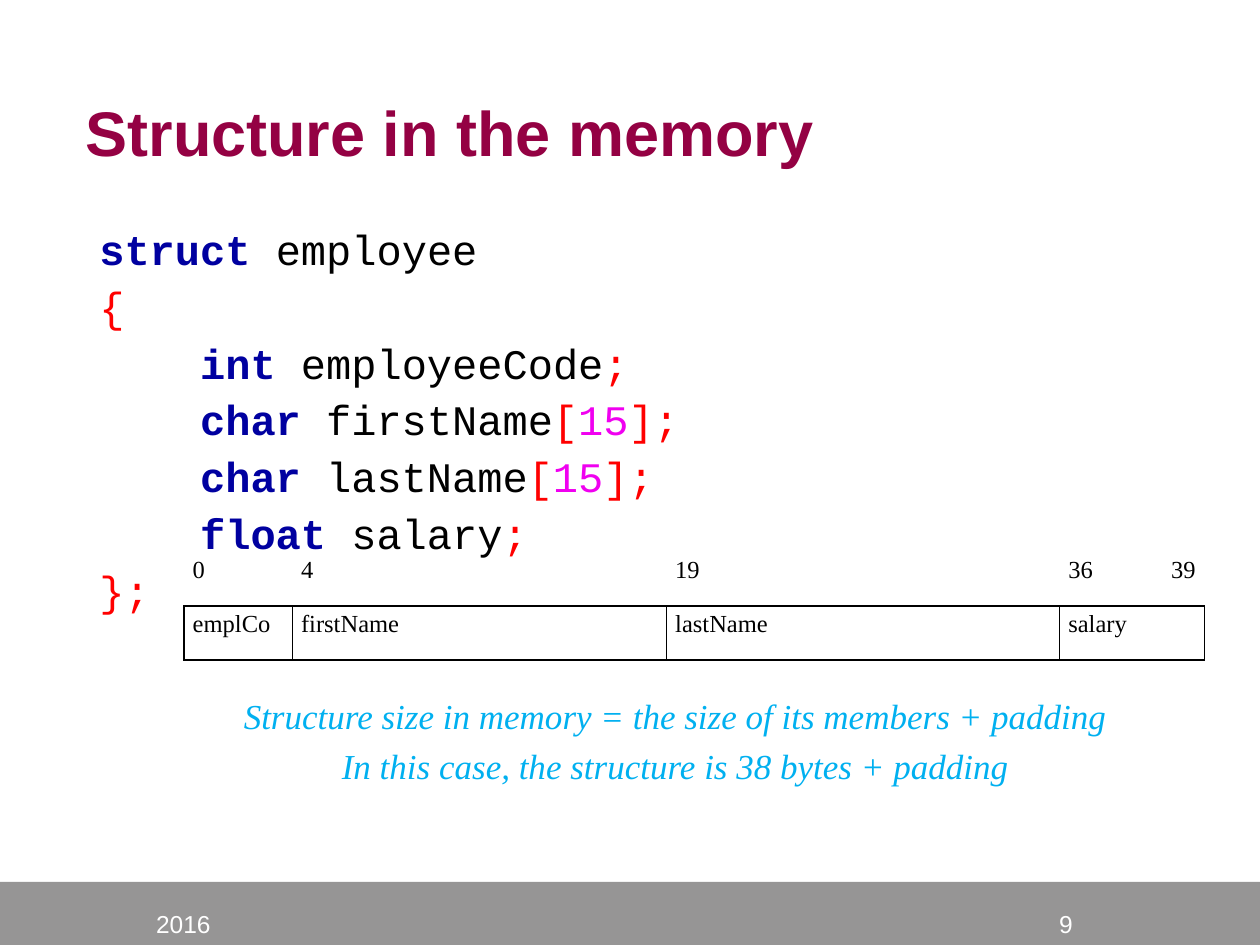
from dataclasses import dataclass
from typing import Optional

from lxml import etree
from pptx import Presentation
from pptx.dml.color import RGBColor
from pptx.enum.shapes import MSO_SHAPE
from pptx.enum.text import MSO_ANCHOR, PP_ALIGN
from pptx.oxml.ns import qn
from pptx.util import Emu, Inches, Pt

LEFT, CENTER, RIGHT = PP_ALIGN.LEFT, PP_ALIGN.CENTER, PP_ALIGN.RIGHT
TOP, MIDDLE, BOTTOM = MSO_ANCHOR.TOP, MSO_ANCHOR.MIDDLE, MSO_ANCHOR.BOTTOM
RECTANGLE = MSO_SHAPE.RECTANGLE
TITLE_ONLY = 5
SLIDE_W, SLIDE_H = Inches(10), Inches(7.5)


@dataclass(frozen=True)
class Theme:
    sans: str = "Arial"
    serif: str = "Times New Roman"
    mono: str = "Courier New"
    title: str = "940143"
    keyword: str = "0000A0"
    symbol: str = "FF0000"
    number: str = "F000F0"
    ink: str = "000000"
    note: str = "00B0F0"
    bar: str = "969595"
    white: str = "FFFFFF"
    title_pt: int = 36
    code_pt: int = 24
    note_pt: int = 20
    small_pt: int = 14


@dataclass(frozen=True)
class Box:
    """Place and size in percent of the slide."""
    x: float
    y: float
    w: float
    h: float

    def emu(self) -> tuple:
        return (Emu(int(SLIDE_W * self.x / 100)), Emu(int(SLIDE_H * self.y / 100)),
                Emu(int(SLIDE_W * self.w / 100)), Emu(int(SLIDE_H * self.h / 100)))


@dataclass(frozen=True)
class Member:
    """A struct member and the table columns its field covers."""
    kind: str
    name: str
    label: str
    offset: int
    width: float
    count: Optional[int] = None


T = Theme()
MEMBERS = [
    Member("int", "employeeCode", "emplCo", 0, 8.6),
    Member("char", "firstName", "firstName", 4, 29.7, 15),
    Member("char", "lastName", "lastName", 19, 31.2, 15),
    Member("float", "salary", "salary", 36, 6.1),
]
LAST_BYTE, LAST_WIDTH = 39, 5.4
NOTES = ["Structure size in memory = the size of its members + padding",
         "In this case, the structure is 38 bytes + padding"]


def add_run(p, text: str, *, font: str, size: int, color: str,
            bold: bool = False, italic: bool = False) -> None:
    r = p.add_run()
    r.text = text
    r.font.name, r.font.size = font, Pt(size)
    r.font.bold, r.font.italic = bold, italic
    r.font.color.rgb = RGBColor.from_string(color)


def add_text(s, box: Box, lines: list, *, align=LEFT, anchor=TOP,
             spacing: float = 1.0, before: float = 0, **style):
    """Each line is a list of (text, overrides of the style)."""
    tf = s.shapes.add_textbox(*box.emu()).text_frame
    tf.word_wrap, tf.vertical_anchor = True, anchor
    for i, line in enumerate(lines):
        p = tf.add_paragraph() if i else tf.paragraphs[0]
        p.alignment, p.line_spacing = align, spacing
        p.space_before = Pt(before if i else 0)
        for text, changes in line:
            add_run(p, text, **{**style, **changes})


def code_lines() -> list:
    keyword = {"color": T.keyword, "bold": True}
    symbol, number = {"color": T.symbol}, {"color": T.number}
    lines = [[("struct ", keyword), ("employee", {})], [("{", symbol)]]
    for m in MEMBERS:
        line = [("    ", {}), (m.kind + " ", keyword), (m.name, {})]
        if m.count:
            line += [("[", symbol), (str(m.count), number), ("];", symbol)]
        else:
            line.append((";", symbol))
        lines.append(line)
    return lines + [[("};", symbol)]]


def set_borders(cell, color: Optional[str]) -> None:
    tc_pr = cell._tc.get_or_add_tcPr()
    for i, side in enumerate(("a:lnL", "a:lnR", "a:lnT", "a:lnB")):
        ln = etree.Element(qn(side), w=str(Pt(1)))
        if color:
            fill = etree.SubElement(ln, qn("a:solidFill"))
            etree.SubElement(fill, qn("a:srgbClr"), val=color)
        else:
            etree.SubElement(ln, qn("a:noFill"))
        tc_pr.insert(i, ln)


def fill_cell(cell, text: str, *, align=LEFT, border: Optional[str] = None) -> None:
    cell.fill.background()
    set_borders(cell, border)
    cell.margin_left = cell.margin_right = Inches(0.07)
    cell.margin_top = cell.margin_bottom = Inches(0.04)
    p = cell.text_frame.paragraphs[0]
    p.alignment = align
    if text:
        add_run(p, text, font=T.serif, size=T.small_pt, color=T.ink)


def add_memory_table(s, box: Box) -> None:
    widths = [m.width for m in MEMBERS] + [LAST_WIDTH]
    table = s.shapes.add_table(2, len(widths), *box.emu()).table
    table.first_row = table.horz_banding = False
    for column, width in zip(table.columns, widths):
        column.width = Emu(int(SLIDE_W * width / 100))
    last = len(MEMBERS)
    for c, m in enumerate(MEMBERS):
        fill_cell(table.cell(0, c), str(m.offset))
        fill_cell(table.cell(1, c), m.label, border=T.ink)
    fill_cell(table.cell(0, last), str(LAST_BYTE), align=RIGHT)
    fill_cell(table.cell(1, last), "", border=T.ink)
    table.cell(1, last - 1).merge(table.cell(1, last))


def add_bar(s, box: Box) -> None:
    sp = s.shapes.add_shape(RECTANGLE, *box.emu())
    sp.shadow.inherit = False
    sp.fill.solid()
    sp.fill.fore_color.rgb = RGBColor.from_string(T.bar)
    sp.line.fill.background()


def set_title(s, box: Box, text: str) -> None:
    sp = s.shapes.title
    sp.left, sp.top, sp.width, sp.height = box.emu()
    tf = sp.text_frame
    tf.vertical_anchor = MIDDLE
    p = tf.paragraphs[0]
    p.alignment = LEFT
    add_run(p, text, font=T.sans, size=T.title_pt, color=T.title, bold=True)


def main() -> None:
    prs = Presentation()
    prs.slide_width, prs.slide_height = SLIDE_W, SLIDE_H
    s = prs.slides.add_slide(prs.slide_layouts[TITLE_ONLY])

    # Title and struct definition
    set_title(s, Box(5.8, 5.6, 89.2, 16.67), "Structure in the memory")
    add_text(s, Box(6.9, 22.27, 77, 38.27), code_lines(), spacing=1.135,
             font=T.mono, size=T.code_pt, color=T.ink)

    # Memory layout and its explanation
    add_memory_table(s, Box(14.6, 58.4, 81, 11.47))
    add_text(s, Box(12.2, 72.8, 82.8, 11.2), [[(note, {})] for note in NOTES],
             align=CENTER, before=5, font=T.serif, size=T.note_pt,
             color=T.note, italic=True)

    # Footer
    add_bar(s, Box(0, 93.33, 100, 6.67))
    for x, width, text in ((5.8, 17.5, "2016"), (74.2, 20.8, "9")):
        add_text(s, Box(x, 93.33, width, 6.67), [[(text, {})]], align=CENTER,
                 anchor=BOTTOM, font=T.sans, size=T.small_pt, color=T.white)

    prs.save("out.pptx")


if __name__ == "__main__":
    main()
